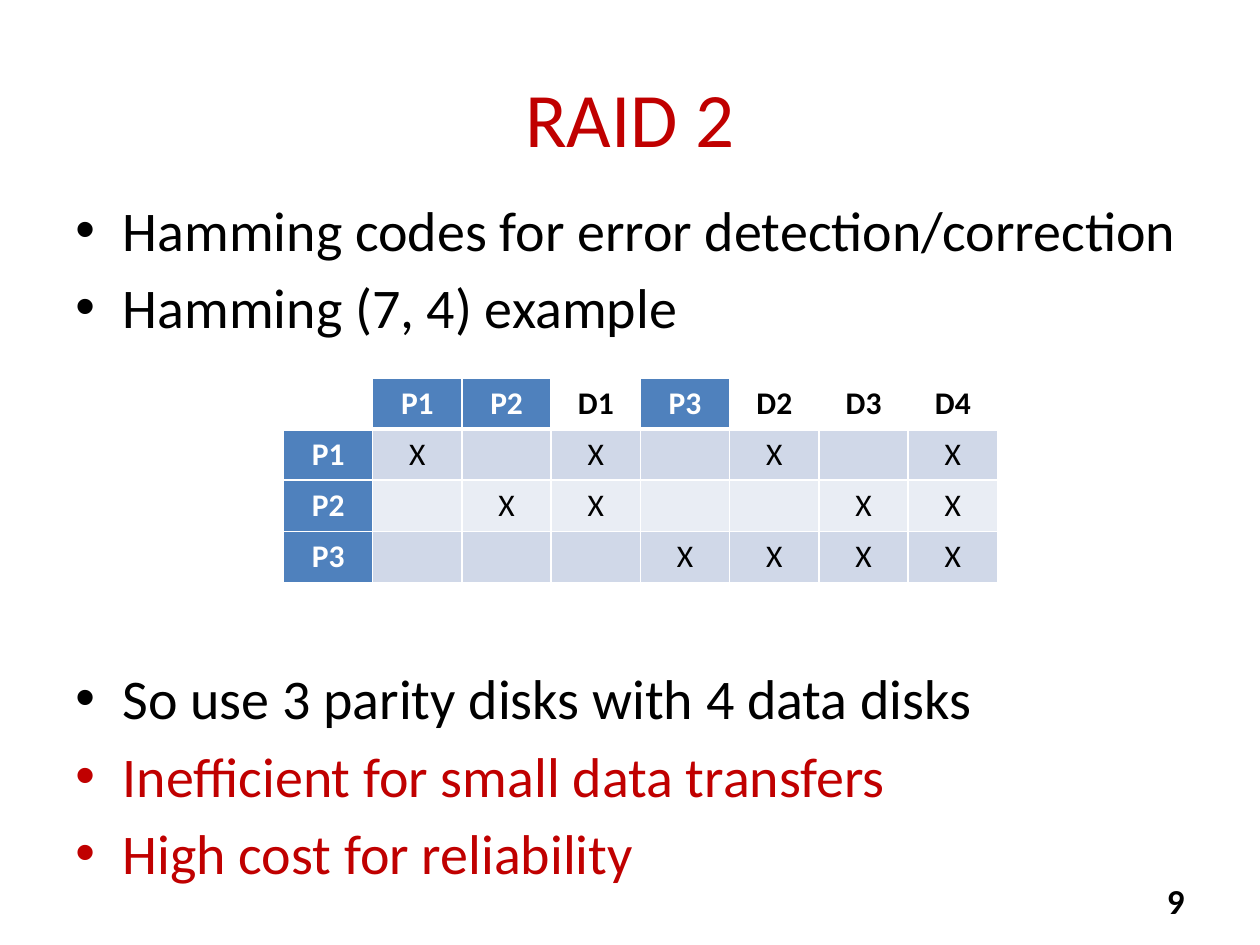
from lxml import etree
from pptx import Presentation
from pptx import util as u
from pptx.dml.color import RGBColor
from pptx.enum import text
from pptx.oxml import ns

RED = RGBColor(0xC0, 0x00, 0x00)
BLACK = RGBColor(0x00, 0x00, 0x00)
WHITE = RGBColor(0xFF, 0xFF, 0xFF)
BLUE = RGBColor(0x4F, 0x81, 0xBD)
BANDS = (RGBColor(0xD0, 0xD8, 0xE8), RGBColor(0xE9, 0xED, 0xF4))

BULLETS = [
    ("Hamming codes for error detection/correction", BLACK, 5.8),
    ("Hamming (7, 4) example", BLACK, 5.8),
    ("So use 3 parity disks with 4 data disks", BLACK, 185.2),
    ("Inefficient for small data transfers", RED, 5.8),
    ("High cost for reliability", RED, 5.8),
]
DISKS = ["P1", "P2", "D1", "P3", "D2", "D3", "D4"]
COVERAGE = {
    "P1": ["P1", "D1", "D2", "D4"],
    "P2": ["P2", "D1", "D3", "D4"],
    "P3": ["P3", "D2", "D3", "D4"],
}


def add_run(p, wording, size, color, bold=False):
    """Add a formatted run to a paragraph."""
    r = p.add_run()
    r.text = wording
    for name, value in dict(name="Calibri", size=u.Pt(size), bold=bold).items():
        setattr(r.font, name, value)
    r.font.color.rgb = color


def add_frame(s, box, anchor):
    """Add a wrapping text box and return its text frame."""
    tf = s.shapes.add_textbox(*map(u.Pt, box)).text_frame
    for name, value in dict(word_wrap=True, vertical_anchor=anchor).items():
        setattr(tf, name, value)
    return tf


def add_line(s, box, wording, size, color, align, bold=False):
    """Place one vertically centred line of text in a box."""
    p = add_frame(s, box, text.MSO_ANCHOR.MIDDLE).paragraphs[0]
    p.alignment = align
    add_run(p, wording, size, color, bold)


def add_bullets(s, box, items):
    """Place a bulleted list in a box."""
    tf = add_frame(s, box, text.MSO_ANCHOR.TOP)
    for i, (wording, color, gap) in enumerate(items):
        p = tf.add_paragraph() if i else tf.paragraphs[0]
        p.space_before = u.Pt(gap)
        add_run(p, wording, 32, color)
        pPr = p._p.get_or_add_pPr()
        pPr.set("marL", str(u.Pt(27)))
        pPr.set("indent", str(u.Pt(-27)))
        etree.SubElement(pPr, ns.qn("a:buFont"), typeface="Arial")
        etree.SubElement(pPr, ns.qn("a:buChar"), char="•")


def set_borders(cell, widths):
    """Draw white cell borders of the given widths by side."""
    tcPr = cell._tc.get_or_add_tcPr()
    for side, width in widths.items():
        ln = etree.SubElement(tcPr, ns.qn(f"a:ln{side}"), w=str(u.Pt(width)))
        fill = etree.SubElement(ln, ns.qn("a:solidFill"))
        etree.SubElement(fill, ns.qn("a:srgbClr"), val=str(WHITE))


def add_hamming_table(s, box):
    """Place the table of disks covered by each parity disk in a box."""
    rows = [[""] + DISKS]
    for parity, covered in COVERAGE.items():
        rows.append([parity] + ["X" if d in covered else "" for d in DISKS])
    n_rows, n_cols = len(rows), len(rows[0])
    table = s.shapes.add_table(n_rows, n_cols, *map(u.Pt, box)).table
    for col in table.columns:
        col.width = u.Pt(box[2] / n_cols)
    for row in table.rows:
        row.height = u.Pt(box[3] / n_rows)
    for i, row in enumerate(rows):
        for j, wording in enumerate(row):
            cell = table.cell(i, j)
            set_borders(cell, dict(L=1, R=1, T=3 if i == 1 else 1, B=1 if i else 3))
            is_parity = wording in COVERAGE
            if wording or i:
                cell.fill.solid()
                plain = BANDS[(i - 1) % 2] if i else WHITE
                cell.fill.fore_color.rgb = BLUE if is_parity else plain
            else:
                cell.fill.background()
            p = cell.text_frame.paragraphs[0]
            p.alignment = text.PP_ALIGN.CENTER
            if wording:
                add_run(p, wording, 18, WHITE if is_parity else BLACK, wording != "X")


def main():
    """Build and save the slide."""
    prs = Presentation()
    prs.slide_width, prs.slide_height = u.Pt(720), u.Pt(540)
    s = prs.slides.add_slide(prs.slide_layouts[6])
    add_line(s, (36, 21.6, 648, 90), "RAID 2", 44, RED, text.PP_ALIGN.CENTER)
    add_bullets(s, (36, 108, 648, 391.7), BULLETS)
    add_hamming_table(s, (162, 216, 408, 116.8))
    add_line(s, (516, 500.4, 168, 28.8), "9", 20, BLACK, text.PP_ALIGN.RIGHT, True)
    prs.save("out.pptx")


if __name__ == "__main__":
    main()
